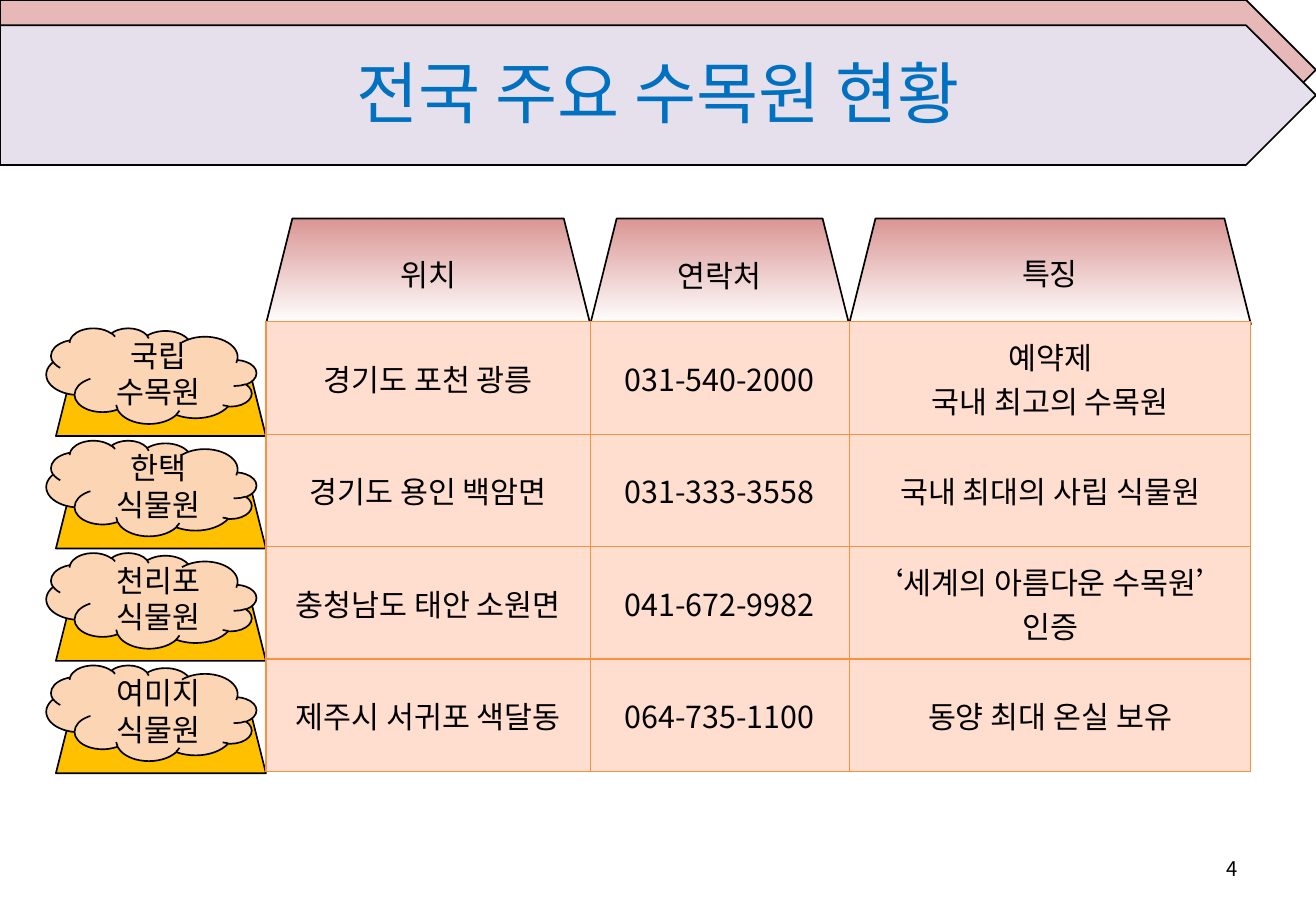
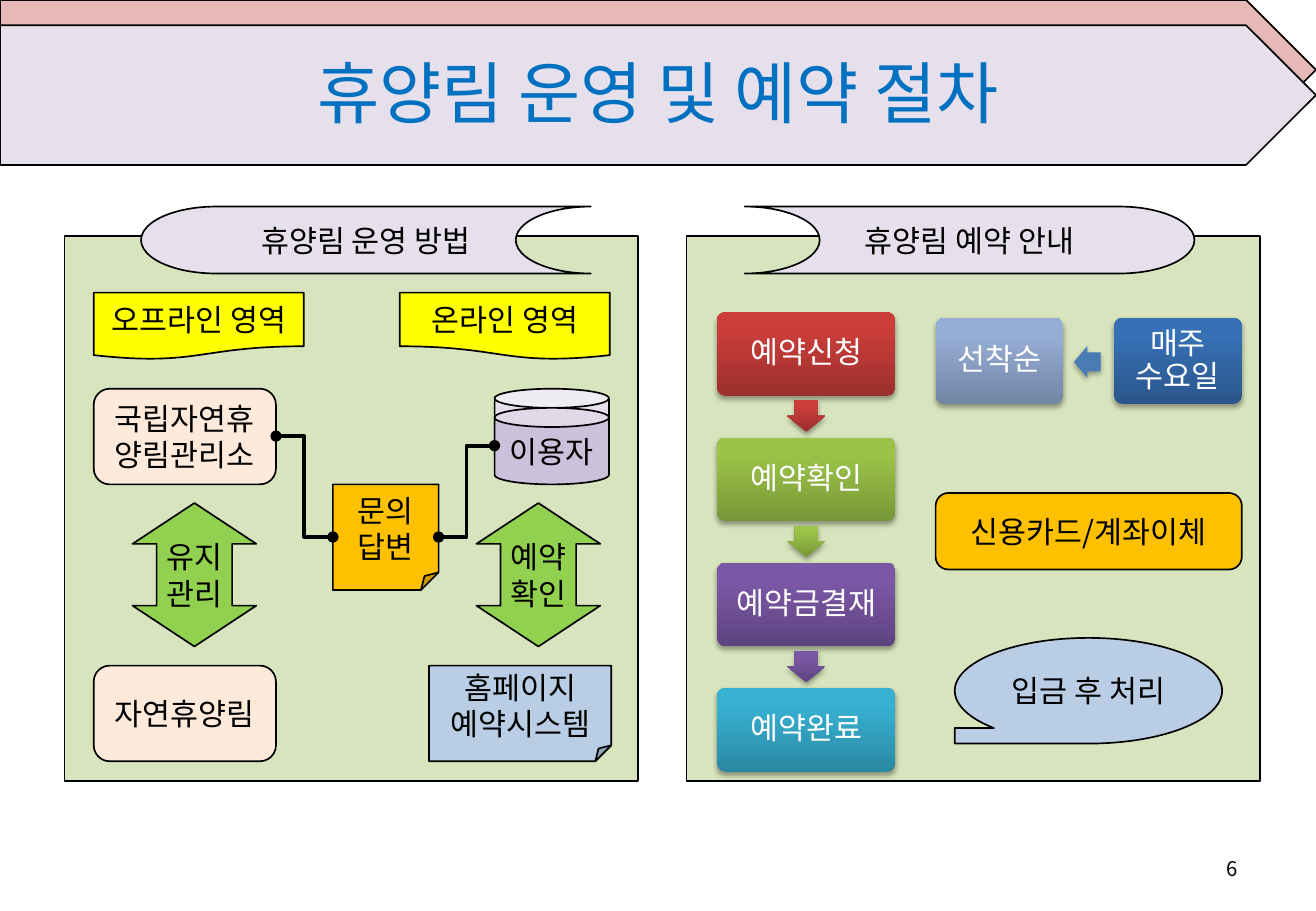
from lxml import etree
from pptx import Presentation
from pptx.dml.color import RGBColor
from pptx.enum.shapes import MSO_CONNECTOR as Link, MSO_SHAPE as Form
from pptx.enum.text import MSO_ANCHOR as Anchor, PP_ALIGN as Align
from pptx.oxml.ns import qn
from pptx.util import Cm, Pt

FONT = "Noto Sans CJK KR"
COLORS = {
    "black": "000000", "white": "FFFFFF", "title": "0070C0",
    "back_band": "E6B9B8", "front_band": "E6E0EC",
    "rose": "D99694", "cell": "FFDECF", "border": "F69240",
    "amber": "FFC000", "peach": "FCD5B5", "panel": "D7E4BD",
    "yellow": "FFFF00", "cream": "FDEADA", "lilac": "CCC1DA",
    "green": "92D050", "sky": "B9CDE5", "arrow_blue": "4B7BB5",
}
# Bottom and top colour of each shaded card
CARD_SHADES = {
    "red": ("9C2F2D", "CB3E3A"), "lime": ("779737", "9BC348"),
    "purple": ("5F4480", "7B58A6"), "teal": ("2A88A2", "37B1D2"),
    "blue": ("2A568B", "3770B5"), "steel": ("7385A4", "96ADD5"),
}
WIDTH, HEIGHT = 27.51, 19.05

TABLE_LEFT, TABLE_TOP, ROW_HEIGHT = 5.56, 6.73, 2.35
COLUMNS = [("위치", 6.78), ("연락처", 5.41), ("특징", 8.4)]
GARDENS = [
    ("국립\n수목원", "경기도 포천 광릉", "031-540-2000", "예약제\n국내 최고의 수목원"),
    ("한택\n식물원", "경기도 용인 백암면", "031-333-3558", "국내 최대의 사립 식물원"),
    ("천리포\n식물원", "충청남도 태안 소원면", "041-672-9982", "‘세계의 아름다운 수목원’ 인증"),
    ("여미지\n식물원", "제주시 서귀포 색달동", "064-735-1100", "동양 최대 온실 보유"),
]
STEPS = [("예약신청", "red"), ("예약확인", "lime"), ("예약금결재", "purple"), ("예약완료", "teal")]


def rgb(name):
    return RGBColor.from_string(COLORS[name])


def add_child(parent, tag, **attributes):
    return etree.SubElement(parent, qn(tag), attributes)


# Text
def write(frame, text, size=18, color="black", align=Align.CENTER, spacing=None):
    frame.text = text
    for para in frame.paragraphs:
        para.alignment = align
        if spacing:
            para.line_spacing = spacing
        for span in para.runs:
            span.font.size = Pt(size)
            span.font.name = FONT
            span.font.color.rgb = rgb(color)
            add_child(span.font._element, "a:ea", typeface=FONT)


def add_text(page, area, text, **style):
    box = page.shapes.add_textbox(*map(Cm, area))
    box.text_frame.word_wrap = True
    box.text_frame.vertical_anchor = Anchor.MIDDLE
    write(box.text_frame, text, **style)


# Shapes
def add_plain(page, form, area):
    shape = page.shapes.add_shape(form, *map(Cm, area))
    shape.shadow.inherit = False
    shape.text_frame.vertical_anchor = Anchor.MIDDLE
    return shape


def shade(shape, first, last, end, angle):
    shape.fill.gradient()
    shape.fill.gradient_angle = angle
    for stop, position, color in zip(shape.fill.gradient_stops, (0, end), (first, last)):
        stop.position = position
        stop.color.rgb = RGBColor.from_string(color)


def add_outlined(page, form, area, color, text="", flip=False, wrap=False):
    shape = add_plain(page, form, area)
    shape.fill.solid()
    shape.fill.fore_color.rgb = rgb(color)
    shape.line.color.rgb = rgb("black")
    shape.line.width = Pt(1)
    if flip:
        shape._element.spPr.find(qn("a:xfrm")).set("flipH", "1")
    if text:
        shape.text_frame.word_wrap = wrap
        write(shape.text_frame, text)
    return shape


def add_two_way_arrow(page, area, text, shaft, head):
    arrow = add_outlined(page, Form.UP_DOWN_ARROW, area, "green", text)
    # The library gives both guides of this preset one name, so write them directly
    guides = arrow._element.spPr.find(qn("a:prstGeom")).find(qn("a:avLst"))
    for guide in list(guides):
        guides.remove(guide)
    for name, share in (("adj1", shaft), ("adj2", head)):
        add_child(guides, "a:gd", name=name, fmla=f"val {round(share * 100000)}")


def add_raised(page, form, area, adjustments, shades=None, color=None):
    shape = add_plain(page, form, area)
    for index, value in enumerate(adjustments):
        shape.adjustments[index] = value
    if shades:
        shade(shape, *CARD_SHADES[shades], 0.8, 90)
    else:
        shape.fill.solid()
        shape.fill.fore_color.rgb = rgb(color)
    shape.line.fill.background()
    effects = shape._element.spPr.find(qn("a:effectLst"))
    shadow = add_child(effects, "a:outerShdw", blurRad="39370", dist="22860",
                       dir="5400000", rotWithShape="0")
    tint = add_child(shadow, "a:srgbClr", val=COLORS["black"])
    add_child(tint, "a:alpha", val="35000")
    return shape


def add_card(page, area, text, shades):
    card = add_raised(page, Form.ROUNDED_RECTANGLE, area, [0.1], shades)
    frame = card.text_frame
    frame.margin_left = frame.margin_right = Cm(0.2)
    frame.margin_top = frame.margin_bottom = Cm(0.2)
    frame.word_wrap = True
    write(frame, text, color="white", spacing=0.9)


def add_link(page, start, end):
    link = page.shapes.add_connector(Link.ELBOW, *map(Cm, start + end))
    link.line.color.rgb = rgb("black")
    link.line.width = Pt(2.25)
    properties = link._element.spPr
    for tag in ("a:headEnd", "a:tailEnd"):
        add_child(properties.find(qn("a:ln")), tag, type="oval")
    add_child(properties, "a:effectLst")


# Table
def style_cell(cell, text):
    cell.vertical_anchor = Anchor.MIDDLE
    write(cell.text_frame, text)
    properties = cell._tc.get_or_add_tcPr()
    for side in ("a:lnL", "a:lnR", "a:lnT", "a:lnB"):
        border = add_child(properties, side, w=str(Pt(0.75)))
        add_child(add_child(border, "a:solidFill"), "a:srgbClr", val=COLORS["border"])
    cell.fill.solid()
    cell.fill.fore_color.rgb = rgb("cell")


def add_garden_table(page):
    total = sum(width for _, width in COLUMNS)
    table = page.shapes.add_table(
        len(GARDENS), len(COLUMNS), Cm(TABLE_LEFT), Cm(TABLE_TOP),
        Cm(total), Cm(ROW_HEIGHT * len(GARDENS))).table
    table.first_row = table.horz_banding = False
    for column, (_, width) in zip(table.columns, COLUMNS):
        column.width = Cm(width)
    for row, (_, *values) in zip(table.rows, GARDENS):
        row.height = Cm(ROW_HEIGHT)
        for cell, value in zip(row.cells, values):
            style_cell(cell, value)


# Shared page frame
def add_page(deck, title, number):
    page = deck.slides.add_slide(deck.slide_layouts[6])
    for top, color in ((0, "back_band"), (0.53, "front_band")):
        add_outlined(page, Form.PENTAGON, (0, top, WIDTH, 2.92), color)
    add_text(page, (1.37, 0.33, 24.77, 3.18), title, size=40, color="title")
    add_text(page, (19.7, 17.65, 6.43, 1.02), number, size=12, align=Align.RIGHT)
    return page


def build_gardens(deck):
    page = add_page(deck, "전국 주요 수목원 현황", "4")
    # Column headings
    left = TABLE_LEFT
    for heading, width in COLUMNS:
        tab = add_outlined(page, Form.TRAPEZOID, (left, 4.57, width, 2.21),
                           "white", heading, wrap=True)
        shade(tab, COLORS["rose"], COLORS["white"], 1, 270)
        left += width
    # Row labels
    for index, (name, *_) in enumerate(GARDENS):
        offset = index * ROW_HEIGHT
        add_outlined(page, Form.TRAPEZOID, (1.17, 7.72 + offset, 4.39, 1.4), "amber")
        add_outlined(page, Form.CLOUD, (0.97, 6.86 + offset, 4.39, 2), "peach",
                     name, flip=True, wrap=True)
    add_garden_table(page)


def build_operation(page):
    add_outlined(page, Form.RECTANGLE, (1.35, 4.93, 11.99, 11.4), "panel")
    add_outlined(page, Form.FLOWCHART_STORED_DATA, (2.95, 4.32, 9.4, 1.4),
                 "front_band", "휴양림 운영 방법")
    # Areas
    for left, text, flip in ((1.96, "오프라인 영역", False), (8.36, "온라인 영역", True)):
        add_outlined(page, Form.FLOWCHART_DOCUMENT, (left, 6.12, 4.39, 1.4),
                     "yellow", text, flip)
    # Offices, users and the exchange between them
    for top, text in ((8.13, "국립자연휴\n양림관리소"), (13.92, "자연휴양림")):
        add_outlined(page, Form.ROUNDED_RECTANGLE, (1.96, top, 3.81, 2), "cream", text)
    for top, color, text in ((8.13, "front_band", ""), (8.53, "lilac", "이용자")):
        add_outlined(page, Form.CAN, (10.34, top, 2.39, 1.6), color, text)
    add_outlined(page, Form.FOLDED_CORNER, (6.96, 10.13, 2.21, 2.21), "amber", "문의\n답변")
    add_link(page, (5.77, 9.12), (6.96, 11.23))
    add_link(page, (10.34, 9.32), (9.17, 11.23))
    for left, text in ((2.77, "유지\n관리"), (9.96, "예약\n확인")):
        add_two_way_arrow(page, (left, 10.52, 2.59, 3), text, shaft=0.61, head=0.33)
    add_outlined(page, Form.FOLDED_CORNER, (8.97, 13.92, 3.81, 2), "sky",
                 "홈페이지\n예약시스템")


def build_booking(page):
    add_outlined(page, Form.RECTANGLE, (14.35, 4.93, 11.99, 11.4), "panel")
    add_outlined(page, Form.FLOWCHART_STORED_DATA, (15.57, 4.32, 9.4, 1.4),
                 "front_band", "휴양림 예약 안내", flip=True)
    # Booking steps
    for index, (text, shades) in enumerate(STEPS):
        top = 6.53 + index * 2.62
        add_card(page, (14.99, top, 3.73, 1.75), text, shades)
        if index < len(STEPS) - 1:
            add_raised(page, Form.DOWN_ARROW, (16.46, top + 1.84, 0.79, 0.66),
                       [0.6, 0.5], shades)
    # Notes beside the steps
    add_card(page, (23.29, 6.65, 2.67, 1.8), "매주 수요일", "blue")
    add_raised(page, Form.LEFT_ARROW, (22.45, 7.24, 0.56, 0.66), [0.6, 0.5],
               color="arrow_blue")
    add_card(page, (19.56, 6.65, 2.67, 1.8), "선착순", "steel")
    add_outlined(page, Form.ROUNDED_RECTANGLE, (19.56, 10.31, 6.4, 1.6),
                 "amber", "신용카드/계좌이체")
    add_outlined(page, Form.FLOWCHART_SEQUENTIAL_ACCESS_STORAGE,
                 (19.96, 13.34, 5.59, 2.21), "sky", "입금 후 처리", flip=True)


def main():
    deck = Presentation()
    deck.slide_width, deck.slide_height = Cm(WIDTH), Cm(HEIGHT)
    build_gardens(deck)
    page = add_page(deck, "휴양림 운영 및 예약 절차", "6")
    build_operation(page)
    build_booking(page)
    deck.save("out.pptx")


if __name__ == "__main__":
    main()
